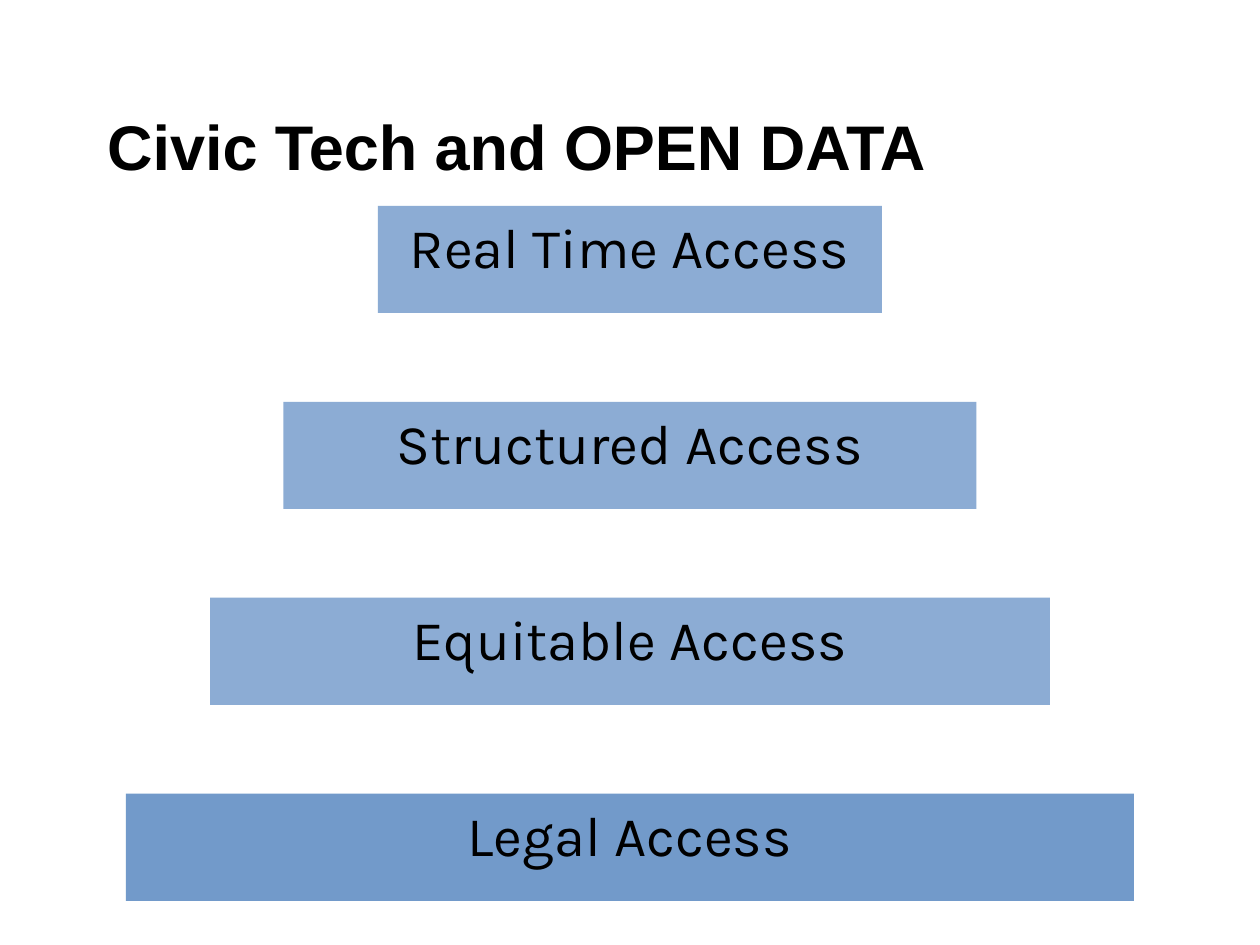
from lxml import etree
from pptx import Presentation
from pptx.dml.color import RGBColor
from pptx.enum.shapes import MSO_SHAPE as Shape
from pptx.enum.text import MSO_ANCHOR as Anchor, PP_ALIGN as Align
from pptx.oxml.ns import qn
from pptx.util import Cm, Pt

COLORS = {"text": "000000", "bar": "4F81BD"}
SLIDE_WIDTH = 25.4
BAR_TOP, BAR_STEP, BAR_HEIGHT = 4.15, 3.95, 2.16

# Top to bottom: label, width in cm, opacity in percent
ACCESS_LEVELS = [
    ("Real Time Access", 10.16, 65),
    ("Structured Access", 13.97, 65),
    ("Equitable Access", 16.93, 65),
    ("Legal Access", 20.32, 80),
]


def write_text(shape, text, *, font, size, bold=False, align=Align.LEFT,
               anchor=Anchor.TOP, inset=0.13, space_after=0, indent=0):
    frame = shape.text_frame
    frame.word_wrap = True
    frame.vertical_anchor = anchor
    frame.margin_left = frame.margin_right = Cm(0.25)
    frame.margin_top = frame.margin_bottom = Cm(inset)
    paragraph = frame.paragraphs[0]
    paragraph.alignment = align
    paragraph.space_after = Pt(space_after)
    if indent:
        paragraph._p.get_or_add_pPr().set("indent", str(Cm(indent)))
    run = paragraph.add_run()
    run.text = text
    run.font.name = font
    run.font.size = Pt(size)
    run.font.bold = bold
    run.font.color.rgb = RGBColor.from_string(COLORS["text"])


def fill_translucent(shape, color, opacity):
    shape.fill.solid()
    shape.fill.fore_color.rgb = RGBColor.from_string(color)
    srgb = shape._element.spPr.find(".//" + qn("a:srgbClr"))
    etree.SubElement(srgb, qn("a:alpha"), val=str(opacity * 1000))


prs = Presentation()
prs.slide_width = Cm(SLIDE_WIDTH)
prs.slide_height = Cm(19.05)
slide = prs.slides.add_slide(prs.slide_layouts[6])

heading = slide.shapes.add_textbox(Cm(1.27), Cm(0.76), Cm(22.86), Cm(3.18))
write_text(heading, "Civic Tech and OPEN DATA", font="Arial", size=36,
           bold=True, anchor=Anchor.BOTTOM, inset=0.25, indent=0.64)

for row, (label, width, opacity) in enumerate(ACCESS_LEVELS):
    bar = slide.shapes.add_shape(
        Shape.RECTANGLE, Cm((SLIDE_WIDTH - width) / 2),
        Cm(BAR_TOP + row * BAR_STEP), Cm(width), Cm(BAR_HEIGHT))
    bar.shadow.inherit = False
    bar.line.fill.background()
    fill_translucent(bar, COLORS["bar"], opacity)
    write_text(bar, label, font="Karla", size=32, align=Align.CENTER,
               space_after=24)

prs.save("out.pptx")
